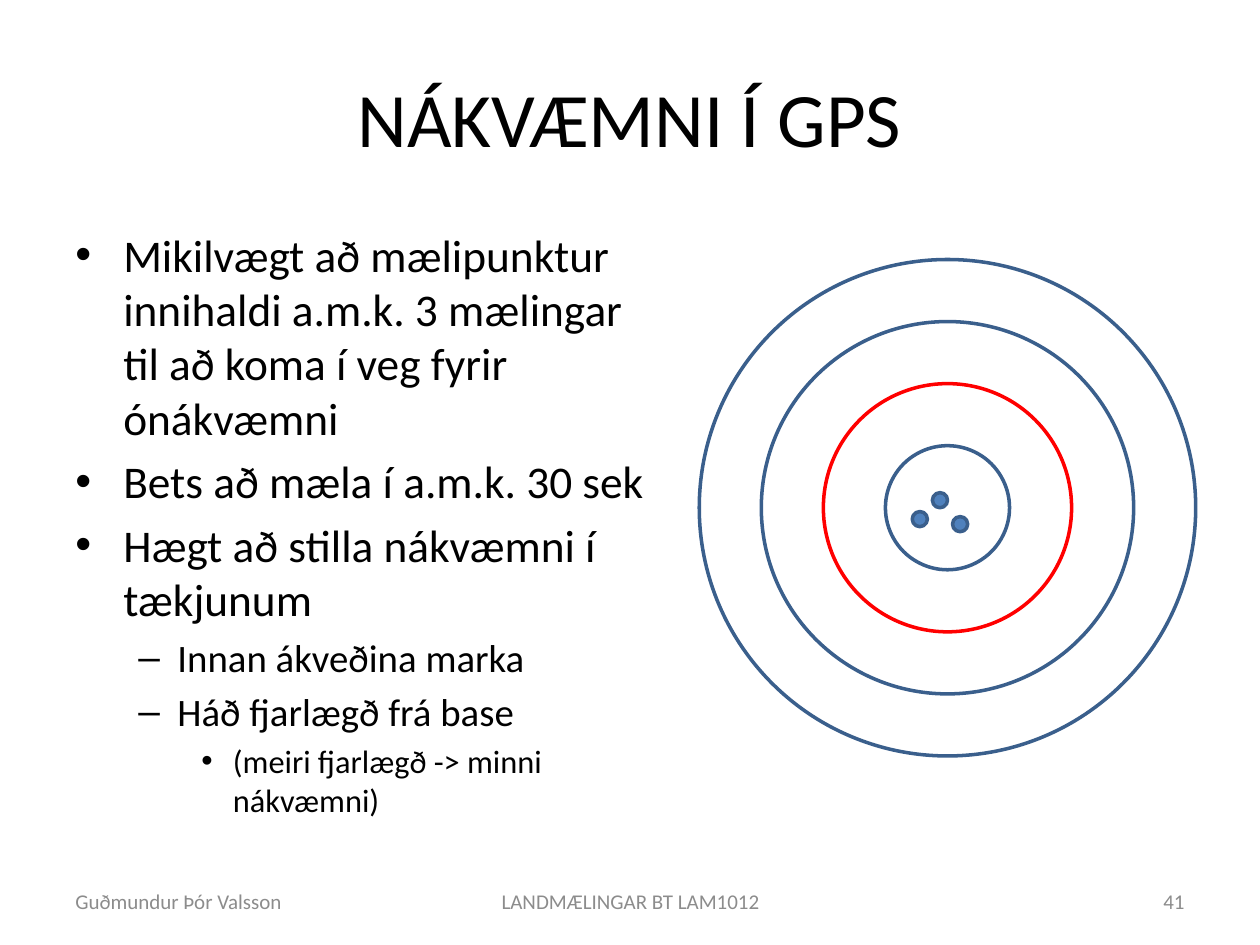
from lxml.etree import SubElement
from pptx import Presentation
from pptx.dml.color import RGBColor
from pptx.enum.shapes import MSO_SHAPE
from pptx.enum.text import MSO_ANCHOR, PP_ALIGN
from pptx.oxml.ns import qn
from pptx.util import Inches, Pt

FONT = "Calibri"
BLACK = RGBColor(0x00, 0x00, 0x00)
GRAY = RGBColor(0x8C, 0x8C, 0x8C)
BLUE = RGBColor(0x4F, 0x81, 0xBD)
DARK_BLUE = RGBColor(0x3A, 0x5F, 0x8C)
RED = RGBColor(0xFF, 0x00, 0x00)

TITLE = "NÁKVÆMNI Í GPS"
BULLETS = [  # level, text
    (0, "Mikilvægt að mælipunktur innihaldi a.m.k. 3 mælingar til að koma í veg fyrir ónákvæmni"),
    (0, "Bets að mæla í a.m.k. 30 sek"),
    (0, "Hægt að stilla nákvæmni í tækjunum"),
    (1, "Innan ákveðina marka"),
    (1, "Háð fjarlægð frá base"),
    (2, "(meiri fjarlægð -> minni nákvæmni)"),
]
LEVELS = [  # bullet, font size, left margin, hanging indent
    ("•", 25.9, 0.38, 0.38),
    ("–", 22.2, 0.81, 0.31),
    ("•", 18.5, 1.25, 0.25),
]
FOOTERS = [  # text, left, width, alignment
    ("Guðmundur Þór Valsson", 0.5, 2.33, PP_ALIGN.LEFT),
    ("LANDMÆLINGAR BT LAM1012", 3.42, 3.17, PP_ALIGN.CENTER),
    ("41", 7.17, 2.33, PP_ALIGN.RIGHT),
]
TARGET_CENTER = (7.52, 4.03)
RING_STEP = 0.4925
RING_COLORS = [DARK_BLUE, RED, DARK_BLUE, DARK_BLUE]  # from the centre outwards
POINT_CENTERS = [(7.3, 4.12), (7.46, 3.97), (7.62, 4.16)]
POINT_RADIUS = 0.06


def style_font(font, size, color):
    font.name = FONT
    font.size = Pt(size)
    font.color.rgb = color


def add_text_frame(slide, left, top, width, height):
    box = slide.shapes.add_textbox(Inches(left), Inches(top), Inches(width), Inches(height))
    box.text_frame.word_wrap = True
    return box.text_frame


def add_bullets(slide):
    frame = add_text_frame(slide, 0.5, 1.75, 4.81, 4.95)
    for index, (level, text) in enumerate(BULLETS):
        paragraph = frame.paragraphs[0] if index == 0 else frame.add_paragraph()
        bullet, size, margin, hanging = LEVELS[level]
        paragraph.text = text
        paragraph.level = level
        if index:
            paragraph.space_before = Pt(round(size * 0.2, 1))
        properties = paragraph._p.get_or_add_pPr()
        properties.set("marL", str(Inches(margin)))
        properties.set("indent", str(-Inches(hanging)))
        SubElement(properties, qn("a:buFont"), typeface="Arial")
        SubElement(properties, qn("a:buChar"), char=bullet)
        style_font(paragraph.font, size, BLACK)


def add_circle(shapes, center, radius, line_color, fill_color=None):
    left, top = (Inches(value - radius) for value in center)
    circle = shapes.add_shape(MSO_SHAPE.OVAL, left, top, Inches(2 * radius), Inches(2 * radius))
    circle.shadow.inherit = False
    circle.line.color.rgb = line_color
    circle.line.width = Pt(2)
    if fill_color is None:
        circle.fill.background()
    else:
        circle.fill.solid()
        circle.fill.fore_color.rgb = fill_color


def add_target(slide):
    rings = slide.shapes.add_group_shape()
    for number in range(len(RING_COLORS), 0, -1):
        add_circle(rings.shapes, TARGET_CENTER, number * RING_STEP, RING_COLORS[number - 1])
    for center in POINT_CENTERS:
        add_circle(slide.shapes, center, POINT_RADIUS, DARK_BLUE, BLUE)


def add_footers(slide):
    for text, left, width, alignment in FOOTERS:
        frame = add_text_frame(slide, left, 6.95, width, 0.4)
        frame.vertical_anchor = MSO_ANCHOR.MIDDLE
        paragraph = frame.paragraphs[0]
        paragraph.text = text
        paragraph.alignment = alignment
        style_font(paragraph.font, 12, GRAY)


def main():
    presentation = Presentation()
    presentation.slide_width = Inches(10)
    presentation.slide_height = Inches(7.5)
    slide = presentation.slides.add_slide(presentation.slide_layouts[5])

    title = slide.shapes.title
    title.left, title.top = Inches(0.5), Inches(0.3)
    title.width, title.height = Inches(9), Inches(1.25)
    title.text_frame.vertical_anchor = MSO_ANCHOR.MIDDLE
    paragraph = title.text_frame.paragraphs[0]
    paragraph.text = TITLE
    paragraph.alignment = PP_ALIGN.CENTER
    style_font(paragraph.font, 44, BLACK)

    add_bullets(slide)
    add_footers(slide)
    add_target(slide)
    presentation.save("out.pptx")


if __name__ == "__main__":
    main()
